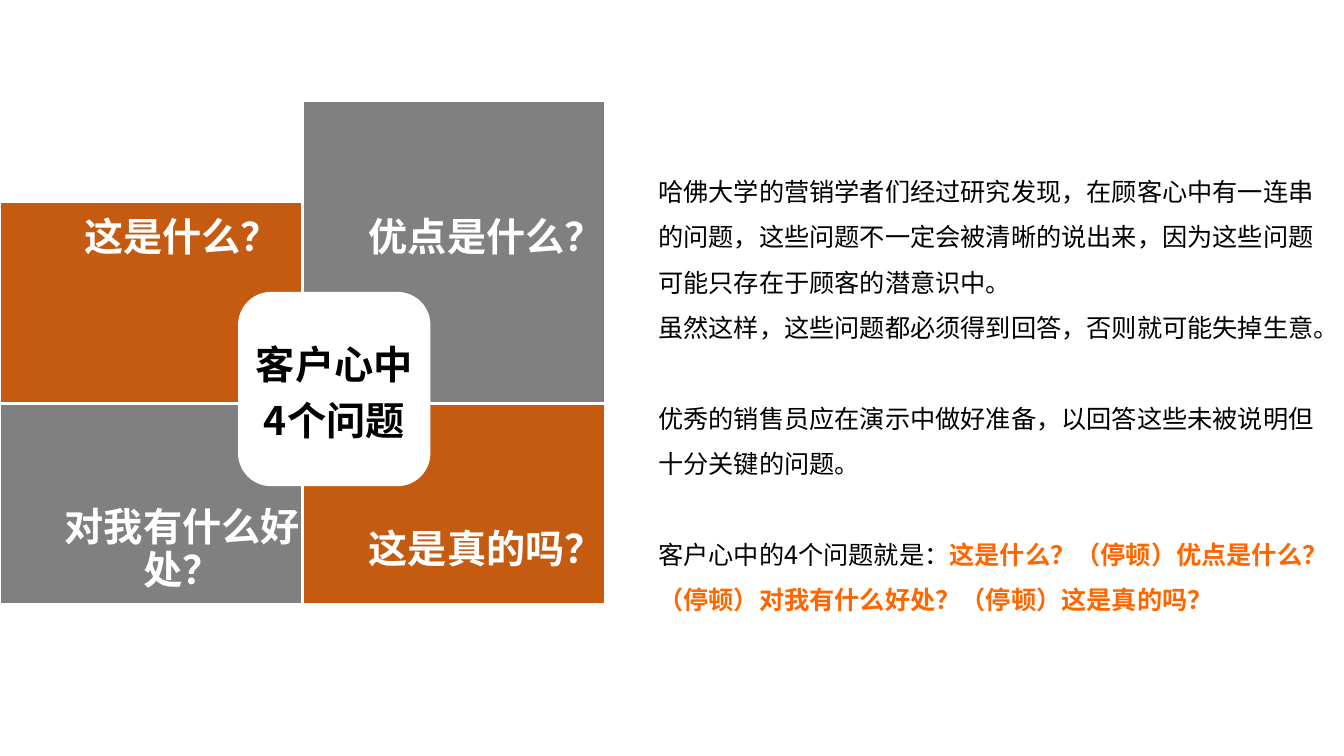
from math import cos, pi, sin

from pptx import Presentation
from pptx.dml.color import RGBColor
from pptx.enum.shapes import MSO_SHAPE
from pptx.enum.text import MSO_ANCHOR, PP_ALIGN
from pptx.oxml.ns import qn
from pptx.util import Inches, Pt

FONT = "Noto Sans CJK SC"
COLORS = {"orange": "C55A11", "gray": "808080", "white": "FFFFFF",
          "black": "000000", "accent": "FF6600"}


def rgb(name):
    return RGBColor.from_string(COLORS[name])


def add_run(p, text, size=18, color="black", bold=False):
    r = p.add_run()
    r.text = text
    r.font.size, r.font.bold, r.font.name = Pt(size), bold, FONT
    r.font.color.rgb = rgb(color)
    ea = r.font._element.makeelement(qn("a:ea"), {"typeface": FONT})
    r.font._element.find(qn("a:latin")).addnext(ea)


def write_text(tf, paragraphs, line=32.4, align=PP_ALIGN.LEFT, before=0,
               anchor=MSO_ANCHOR.TOP, insets=(0.1, 0.05, 0.1, 0.05), **fmt):
    """Each paragraph is a list of (text, run format) pairs."""
    tf.word_wrap = True
    tf.vertical_anchor = anchor
    (tf.margin_left, tf.margin_top,
     tf.margin_right, tf.margin_bottom) = map(Inches, insets)
    for i, runs in enumerate(paragraphs):
        p = tf.paragraphs[0] if i == 0 else tf.add_paragraph()
        p.alignment = align
        p.line_spacing = Pt(line)
        gap = before[i] if isinstance(before, list) else before
        p.space_before = Pt(gap if i else 0)
        for text, extra in runs:
            add_run(p, text, **{**fmt, **extra})


def paint(sp, color):
    sp.shadow.inherit = False
    sp.fill.solid()
    sp.fill.fore_color.rgb = rgb(color)
    sp.line.color.rgb = rgb("white")
    sp.line.width = Pt(2)


def add_petal(s, box, dx, dy, color):
    """Rectangle whose outer corner, on side (dx, dy), is rounded."""
    x, y, w, h = box
    cx, cy = x + w / 2, y + h / 2
    rx, ry = w / 10, h / 6
    steps = 16
    angles = [pi / 2 * i / steps for i in range(steps + 1)]
    arc = [(cx + dx * (w / 2 - rx + rx * sin(a)),
            cy + dy * (h / 2 - ry + ry * cos(a))) for a in angles]
    inner_x, inner_y = cx - dx * w / 2, cy - dy * h / 2
    points = [(inner_x, cy + dy * h / 2), *arc,
              (cx + dx * w / 2, inner_y), (inner_x, inner_y)]
    fb = s.shapes.build_freeform(*points[0], scale=Inches(1))
    fb.add_line_segments(points[1:], close=True)
    paint(fb.convert_to_shape(), color)


def add_matrix(s, box):
    x, y, w, h = box
    qw, qh = w / 2, h / 2
    label_h = qh * 0.75
    label = dict(line=30.3, size=28, bold=True, align=PP_ALIGN.CENTER,
                 anchor=MSO_ANCHOR.MIDDLE)

    # Four questions; the first petal is wider and flatter than the others
    questions = [
        ("这是什么？", -1, -1, "orange", (x - 0.56, y + 0.36, qw + 0.56, 1.76)),
        ("优点是什么？", 1, -1, "gray", (x + qw, y, qw, qh)),
        ("对我有什么好处？", -1, 1, "gray", (x, y + qh, qw, qh)),
        ("这是真的吗？", 1, 1, "orange", (x + qw, y + qh, qw, qh)),
    ]
    for text, dx, dy, color, petal in questions:
        add_petal(s, petal, dx, dy, color)
        left = x if dx < 0 else x + qw
        top = y if dy < 0 else y + h - label_h
        sp = s.shapes.add_textbox(*map(Inches, (left, top, qw, label_h)))
        write_text(sp.text_frame, [[(text, {})]], color="white",
                   insets=(0.19, 0.24, 0.19, 0.14), **label)

    # Centre
    cw, ch = 1.88, 1.9
    sp = s.shapes.add_shape(
        MSO_SHAPE.ROUNDED_RECTANGLE,
        *map(Inches, (x + qw - cw / 2, y + qh - ch / 2, cw, ch)))
    paint(sp, "white")
    write_text(sp.text_frame, [[("客户心中", {})], [("4个问题", {})]],
               before=9.8, insets=(0.05, 0.14, 0.05, 0.04), **label)


def add_explanation(s, box):
    sp = s.shapes.add_textbox(*map(Inches, box))
    paragraphs = [
        [("哈佛大学的营销学者们经过研究发现，在顾客心中有一连串的问题，"
          "这些问题不一定会被清晰的说出来，因为这些问题可能只存在于顾客的潜意识中。", {})],
        [("虽然这样，这些问题都必须得到回答，否则就可能失掉生意。", {})],
        [("优秀的销售员应在演示中做好准备，以回答这些未被说明但十分关键的问题。", {})],
        [("客户心中的4个问题就是：", {}),
         ("这是什么？（停顿）优点是什么？（停顿）对我有什么好处？（停顿）这是真的吗？",
          {"color": "accent", "bold": True})],
    ]
    write_text(sp.text_frame, paragraphs, before=[0, 0, 32.4, 32.4])


def main():
    prs = Presentation()
    prs.slide_width, prs.slide_height = Inches(13.33), Inches(7.5)
    s = prs.slides.add_slide(prs.slide_layouts[6])
    add_matrix(s, (0.3, 1.39, 6.03, 4.94))
    add_explanation(s, (6.43, 1.55, 6.74, 4.6))
    prs.save("out.pptx")


if __name__ == "__main__":
    main()
